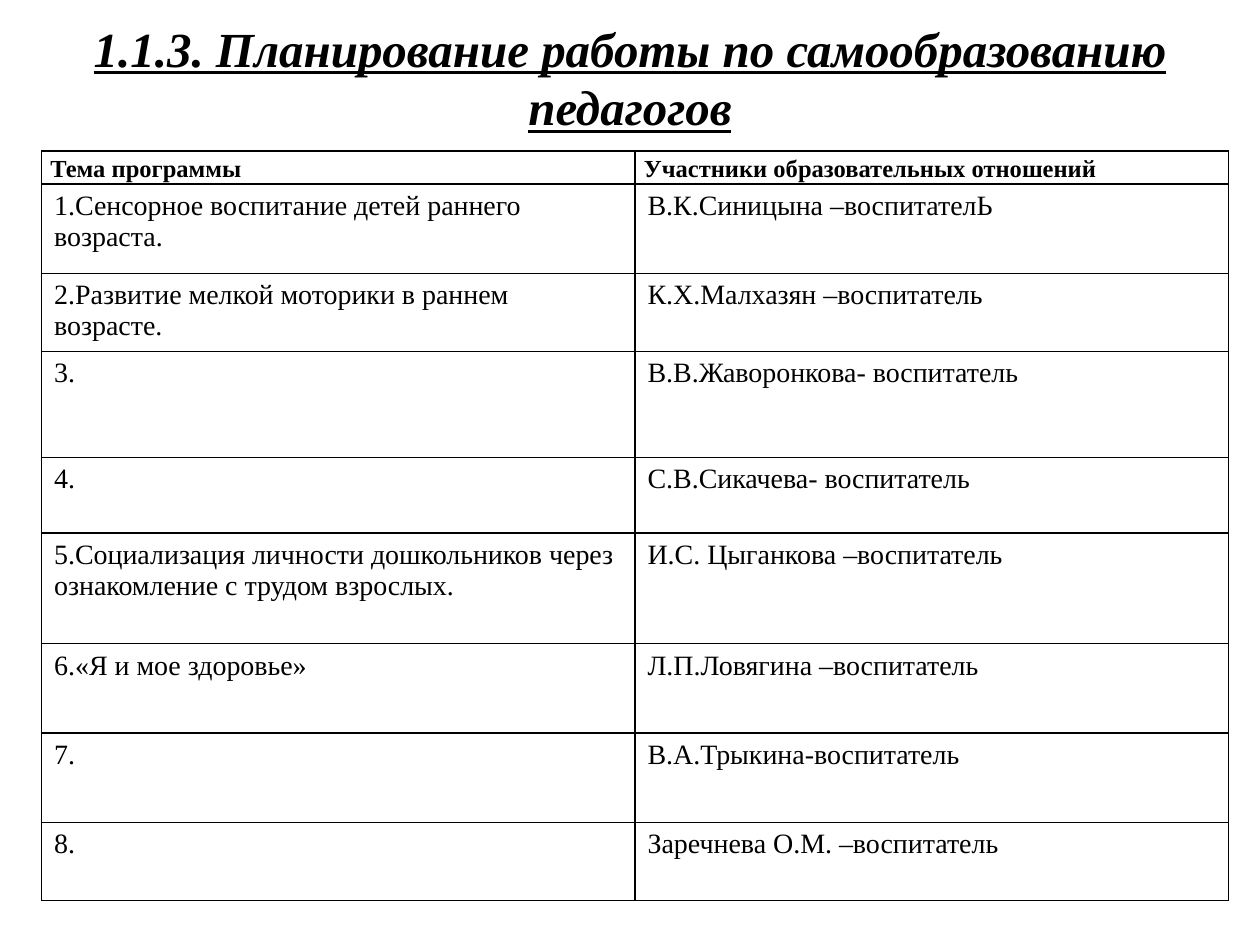
from lxml.etree import SubElement
from pptx import Presentation
from pptx.dml.color import RGBColor
from pptx.enum.text import MSO_ANCHOR, MSO_AUTO_SIZE, PP_ALIGN
from pptx.oxml.ns import qn
from pptx.util import Inches, Pt

TITLE = "1.1.3. Планирование работы по самообразованию педагогов"
HEADER = ("Тема программы", "Участники образовательных отношений")
# Topic, participant, row height in inches
TOPICS = [
    ("1.Сенсорное воспитание детей раннего возраста.", "В.К.Синицына –воспитателЬ", 0.71),
    ("2.Развитие мелкой моторики в раннем возрасте.", "К.Х.Малхазян –воспитатель", 0.62),
    ("3.", "В.В.Жаворонкова- воспитатель", 0.84),
    ("4.", "С.В.Сикачева- воспитатель", 0.6),
    ("5.Социализация личности дошкольников через ознакомление с трудом взрослых.",
     "И.С. Цыганкова –воспитатель", 0.88),
    ("6.«Я и мое здоровье»", "Л.П.Ловягина –воспитатель", 0.71),
    ("7.", "В.А.Трыкина-воспитатель", 0.71),
    ("8.", "Заречнева О.М. –воспитатель", 0.62),
]
HEADER_HEIGHT = 0.26
LEFT, TOP, WIDTH = 0.33, 1.2, 9.42
FONT = "Times New Roman"
BLACK = RGBColor(0, 0, 0)


def add_text(p, text, size, bold=False):
    r = p.add_run()
    r.text = text
    r.font.name, r.font.size, r.font.bold = FONT, Pt(size), bold
    r.font.color.rgb = BLACK
    return r


def set_borders(cell):
    tc_pr = cell._tc.get_or_add_tcPr()
    for side in ("a:lnL", "a:lnR", "a:lnT", "a:lnB"):
        ln = SubElement(tc_pr, qn(side), w=str(Pt(1)))
        fill = SubElement(ln, qn("a:solidFill"))
        SubElement(fill, qn("a:srgbClr"), val=str(BLACK))


def fill_cell(cell, text, is_header):
    set_borders(cell)
    cell.fill.background()
    p = cell.text_frame.paragraphs[0]
    add_text(p, text, 14 if is_header else 16, is_header)
    if is_header:
        cell.margin_left = cell.margin_right = Inches(0.07)
        cell.margin_top = cell.margin_bottom = 0
        p.line_spacing, p.space_after = 1.15, Pt(10)


prs = Presentation()
prs.slide_width, prs.slide_height = Inches(10), Inches(7.5)
s = prs.slides.add_slide(prs.slide_layouts[5])

# Title
title = s.shapes.title
title.left, title.top = Inches(0.5), Inches(0.3)
title.width, title.height = Inches(9), Inches(0.62)
tf = title.text_frame
tf.word_wrap, tf.auto_size = True, MSO_AUTO_SIZE.NONE
tf.vertical_anchor = MSO_ANCHOR.MIDDLE
p = tf.paragraphs[0]
p.alignment = PP_ALIGN.CENTER
r = add_text(p, TITLE, 28, True)
r.font.italic = r.font.underline = True

# Table of topics and participants
rows = [(*HEADER, HEADER_HEIGHT)] + TOPICS
height = sum(row[-1] for row in rows)
table = s.shapes.add_table(len(rows), len(HEADER), Inches(LEFT), Inches(TOP),
                           Inches(WIDTH), Inches(height)).table
table.horz_banding = False
for col in table.columns:
    col.width = Inches(WIDTH / len(HEADER))
for i, (*texts, row_height) in enumerate(rows):
    table.rows[i].height = Inches(row_height)
    for j, text in enumerate(texts):
        fill_cell(table.cell(i, j), text, i == 0)

prs.save("out.pptx")
